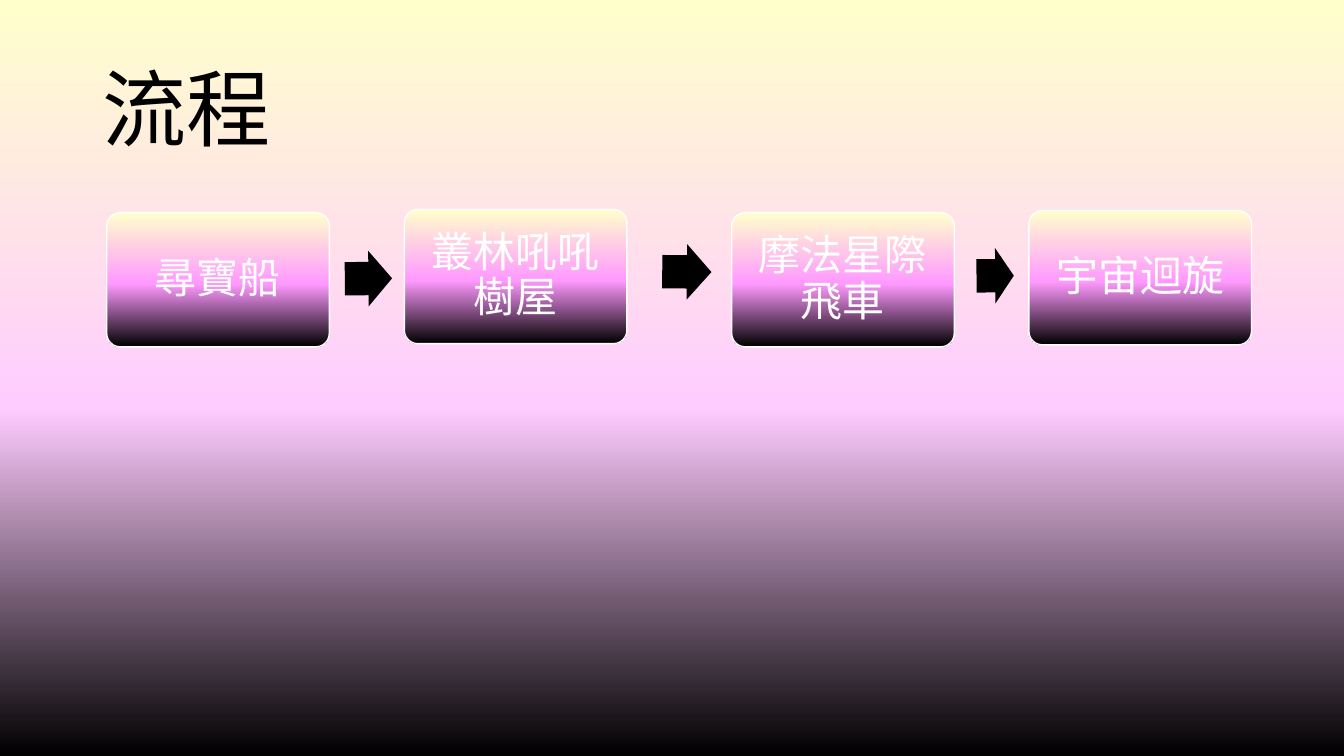
from copy import deepcopy

from pptx import Presentation
from pptx.dml.color import RGBColor
from pptx.enum.shapes import MSO_SHAPE
from pptx.enum.text import MSO_ANCHOR, PP_ALIGN
from pptx.oxml.ns import qn
from pptx.util import Cm, Pt

ROUNDED = MSO_SHAPE.ROUNDED_RECTANGLE
RIGHT_ARROW = MSO_SHAPE.RIGHT_ARROW
MIDDLE = MSO_ANCHOR.MIDDLE
LEFT, CENTER = PP_ALIGN.LEFT, PP_ALIGN.CENTER

TITLE_ONLY = 5
STEP_WIDTH, STEP_HEIGHT, ARROW_HEIGHT = 5.61, 3.38, 1.4
BACKGROUND_STOPS = [(0, "FFFFCC"), (0.54, "FFCCFF"), (1, "000000")]
STEP_STOPS = [(0, "FFFFCC"), (0.53, "FF99FF"), (1, "000000")]

# Label, left and top within the flow, in cm
STEPS = [
    ("尋寶船", 0, 0.08),
    ("叢林吼吼樹屋", 7.5, 0),
    ("摩法星際飛車", 15.75, 0.08),
    ("宇宙迴旋", 23.24, 0.03),
]
# Left, top and width within the flow, in cm, then rotation in degrees
ARROWS = [
    (6, 1.04, 1.19, -0.6),
    (14, 0.87, 1.24, 0.5),
    (21.92, 0.97, 0.94, -0.4),
]


def color(value):
    return RGBColor.from_string(value)


def fill_gradient(fill, element, stops):
    """Fill from top to bottom; element is the XML that holds the fill."""
    fill.gradient()
    fill.gradient_angle = 270
    stop_list = element.find(".//" + qn("a:gsLst"))
    while len(stop_list) < len(stops):
        stop_list.append(deepcopy(stop_list[-1]))
    for stop, (position, value) in zip(fill.gradient_stops, stops):
        stop.position = position
        stop.color.rgb = color(value)


def format_text(frame, text, size, font_name, value, alignment):
    frame.text = text
    frame.word_wrap = True
    frame.vertical_anchor = MIDDLE
    paragraph = frame.paragraphs[0]
    paragraph.alignment = alignment
    paragraph.line_spacing = 0.9
    paragraph.font.size = Pt(size)
    paragraph.font.name = font_name
    paragraph.font.color.rgb = color(value)


def place_title(slide, left, top, width, height):
    title = slide.shapes.title
    title.left, title.top = Cm(left), Cm(top)
    title.width, title.height = Cm(width), Cm(height)
    format_text(title.text_frame, "流程", 60, "Noto Sans CJK JP", "000000", LEFT)


def add_step(slide, label, left, top):
    step = slide.shapes.add_shape(
        ROUNDED, Cm(left), Cm(top), Cm(STEP_WIDTH), Cm(STEP_HEIGHT))
    step.shadow.inherit = False
    step.adjustments[0] = 0.1
    fill_gradient(step.fill, step._element, STEP_STOPS)
    step.line.color.rgb = color("FFFFFF")
    step.line.width = Pt(1)
    frame = step.text_frame
    frame.margin_left = frame.margin_right = Cm(0.4)
    frame.margin_top = frame.margin_bottom = Cm(0.4)
    format_text(frame, label, 30, "Calibri", "FFFFFF", CENTER)


def add_arrow(slide, left, top, width, rotation):
    arrow = slide.shapes.add_shape(
        RIGHT_ARROW, Cm(left), Cm(top), Cm(width), Cm(ARROW_HEIGHT))
    arrow.shadow.inherit = False
    arrow.adjustments[0] = 0.6
    arrow.adjustments[1] = 0.5
    arrow.rotation = rotation
    arrow.fill.solid()
    arrow.fill.fore_color.rgb = color("000000")
    arrow.line.fill.background()


def add_flow(slide, left, top):
    for label, step_left, step_top in STEPS:
        add_step(slide, label, left + step_left, top + step_top)
    for arrow_left, arrow_top, width, rotation in ARROWS:
        add_arrow(slide, left + arrow_left, top + arrow_top, width, rotation)


def main():
    presentation = Presentation()
    presentation.slide_width, presentation.slide_height = Cm(33.87), Cm(19.05)
    slide = presentation.slides.add_slide(presentation.slide_layouts[TITLE_ONLY])
    fill_gradient(slide.background.fill, slide._element, BACKGROUND_STOPS)
    place_title(slide, 2.34, 1.02, 29.21, 3.68)
    add_flow(slide, 2.69, 5.28)
    presentation.save("out.pptx")


if __name__ == "__main__":
    main()
